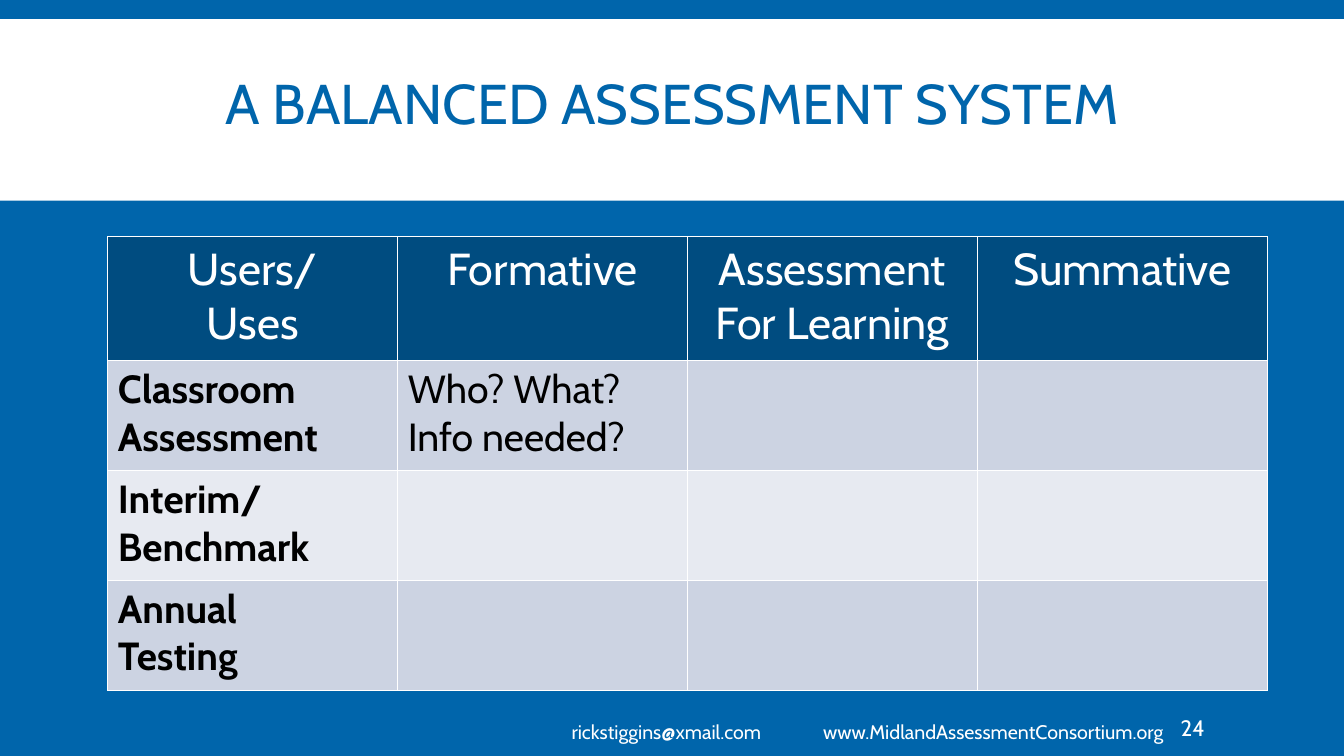
import pptx
import pptx.dml.color
import pptx.enum.shapes
import pptx.enum.text
import pptx.oxml
import pptx.oxml.ns
import pptx.util
from pptx.util import Inches

BLUE = "0065AB"
NAVY = "004C80"
WHITE = "FFFFFF"
BLACK = "000000"
ROW_FILLS = ["CCD3E2", "E7EAF1"]
ALIGN = pptx.enum.text.PP_ALIGN
ANCHOR = pptx.enum.text.MSO_ANCHOR

HEADINGS = ["Users/\nUses", "Formative", "Assessment For Learning", "Summative"]
ROWS = [
    ["Classroom Assessment", "Who? What? Info needed?", "", ""],
    ["Interim/\nBenchmark", "", "", ""],
    ["Annual\vTesting", "", "", ""],
]


def color(hex_value):
    return pptx.dml.color.RGBColor.from_string(hex_value)


def set_fill(fill, hex_value):
    fill.solid()
    fill.fore_color.rgb = color(hex_value)


def write_text(text_frame, text, size, hex_value=WHITE, bold=False,
               align=ALIGN.LEFT, line_spacing=None):
    """Each newline starts a paragraph; a vertical tab is a line break."""
    text_frame.word_wrap = True
    text_frame.text = text
    for paragraph in text_frame.paragraphs:
        paragraph.alignment = align
        paragraph.line_spacing = line_spacing
        for run in paragraph.runs:
            run.font.name = "Cabin"
            run.font.size = pptx.util.Pt(size)
            run.font.bold = bold
            run.font.color.rgb = color(hex_value)


def add_text(slide, left, top, width, height, text, left_inset=0.1, **text_format):
    text_frame = slide.shapes.add_textbox(
        Inches(left), Inches(top), Inches(width), Inches(height)).text_frame
    text_frame.margin_left = Inches(left_inset)
    text_frame.vertical_anchor = ANCHOR.MIDDLE
    write_text(text_frame, text, **text_format)


def add_title_band(slide):
    band = slide.shapes.add_shape(
        pptx.enum.shapes.MSO_SHAPE.RECTANGLE,
        Inches(0), Inches(0.19), Inches(13.33), Inches(1.8))
    band.shadow.inherit = False
    set_fill(band.fill, WHITE)
    band.line.fill.background()


def set_borders(cell, hex_value, points):
    properties = cell._tc.get_or_add_tcPr()
    for position, side in enumerate(["lnL", "lnR", "lnT", "lnB"]):
        border = pptx.oxml.parse_xml(
            f'<a:{side} {pptx.oxml.ns.nsdecls("a")} w="{pptx.util.Pt(points)}">'
            f'<a:solidFill><a:srgbClr val="{hex_value}"/></a:solidFill></a:{side}>')
        properties.insert(position, border)


def add_assessment_table(slide):
    table = slide.shapes.add_table(
        len(ROWS) + 1, len(HEADINGS),
        Inches(1.07), Inches(2.35), Inches(11.5), Inches(4.5)).table
    for row_index, texts in enumerate([HEADINGS] + ROWS):
        is_header = row_index == 0
        table.rows[row_index].height = Inches(1.23 if is_header else 1.09)
        for column_index, text in enumerate(texts):
            cell = table.cell(row_index, column_index)
            set_fill(cell.fill, NAVY if is_header else ROW_FILLS[(row_index - 1) % 2])
            set_borders(cell, WHITE, 1)
            if is_header:
                write_text(cell.text_frame, text, size=32, align=ALIGN.CENTER)
            else:
                write_text(cell.text_frame, text, size=28, hex_value=BLACK,
                           bold=column_index == 0)


def main():
    presentation = pptx.Presentation()
    presentation.slide_width = Inches(13.33)
    presentation.slide_height = Inches(7.5)
    slide = presentation.slides.add_slide(presentation.slide_layouts[6])
    set_fill(slide.background.fill, BLUE)

    add_title_band(slide)
    add_text(slide, 0.92, 0.27, 11.5, 1.59, "A BALANCED ASSESSMENT SYSTEM",
             size=40, hex_value=BLUE, align=ALIGN.CENTER, line_spacing=0.85)
    add_assessment_table(slide)
    add_text(slide, 4.6, 7.02, 3.05, 0.48, "rickstiggins@xmail.com",
             size=14, align=ALIGN.RIGHT)
    add_text(slide, 7.65, 7.02, 3.99, 0.48, "www.MidlandAssessmentConsortium.org",
             size=14, align=ALIGN.RIGHT)
    add_text(slide, 11.66, 7.02, 1.03, 0.4, "24", left_inset=0.05, size=16)

    presentation.save("out.pptx")


if __name__ == "__main__":
    main()
